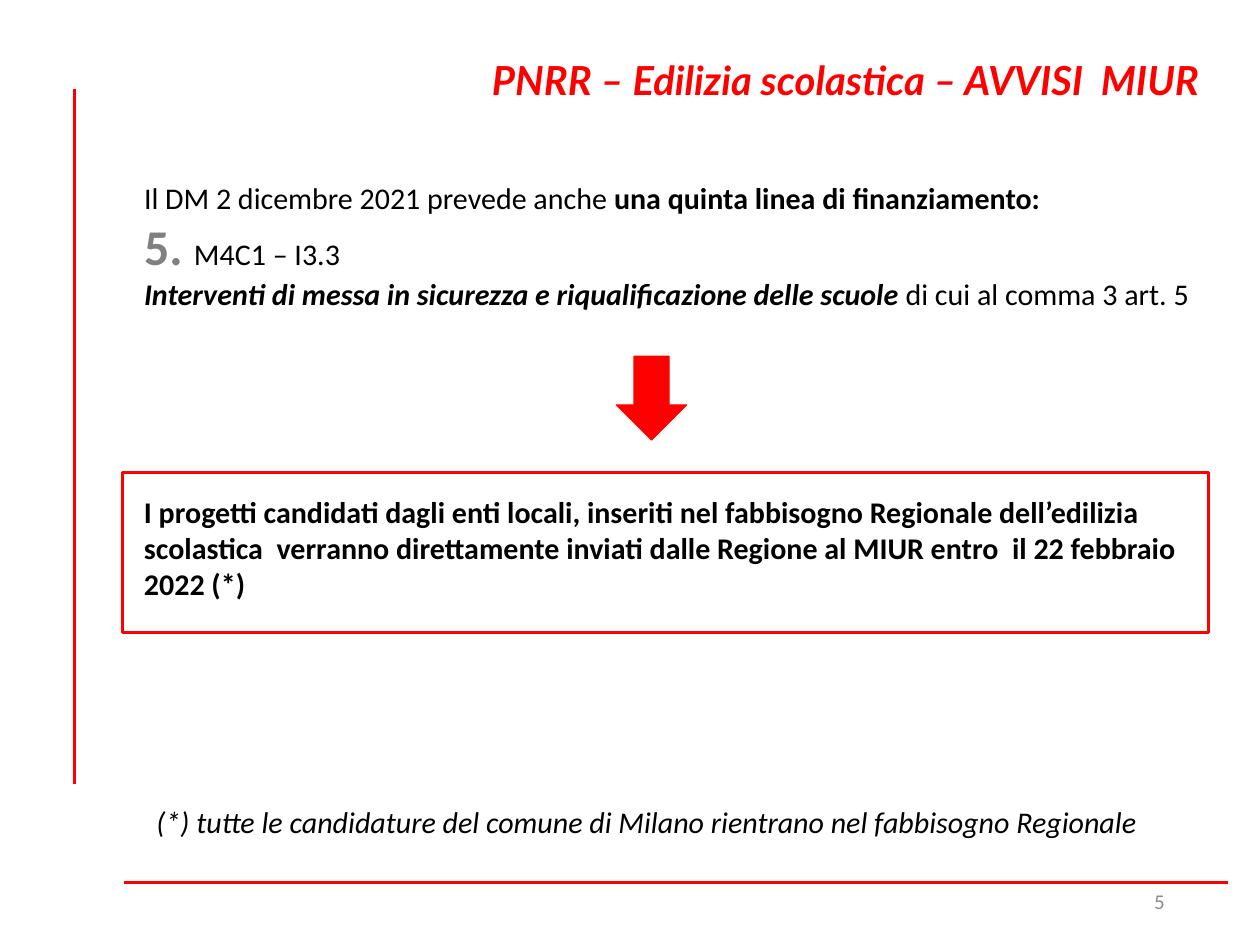
from pptx import Presentation
from pptx.dml.color import RGBColor
from pptx.enum.shapes import MSO_CONNECTOR, MSO_SHAPE
from pptx.enum.text import MSO_ANCHOR, MSO_AUTO_SIZE, PP_ALIGN
from pptx.oxml.ns import qn
from pptx.util import Inches, Pt
from lxml.etree import SubElement

THEME = {
    "red": RGBColor(255, 0, 0),
    "black": RGBColor(0, 0, 0),
    "gray": RGBColor(0x80, 0x80, 0x80),
    "pale": RGBColor(0x8C, 0x8C, 0x8C),
    "title": Pt(32), "text": Pt(24), "step": Pt(40), "page": Pt(16.8),
    "rule": Pt(2.25), "thin": Pt(1),
    "head": "Lato", "body": "Calibri",
}


def place(shape, left, top, width, height):
    spots = dict(left=left, top=top, width=width, height=height)
    for key, val in spots.items():
        setattr(shape, key, Inches(val))


def write(shape, lines, align=PP_ALIGN.LEFT, anchor=MSO_ANCHOR.TOP, wrap=True):
    frame = shape.text_frame
    frame.auto_size = MSO_AUTO_SIZE.NONE
    frame.word_wrap = wrap
    frame.vertical_anchor = anchor
    for i, runs in enumerate(lines):
        para = frame.add_paragraph() if i else frame.paragraphs[0]
        props = para._p.get_or_add_pPr()
        props.set("marL", "0")
        props.set("indent", "0")
        SubElement(props, qn("a:buNone"))
        para.alignment = align
        para.space_before = Pt(0)
        for text, form in runs:
            run = para.add_run()
            run.text = text
            look = {"name": THEME["body"], "size": THEME["text"],
                    "bold": False, "italic": False, **form}
            run.font.color.rgb = look.pop("color", THEME["black"])
            for key, val in look.items():
                setattr(run.font, key, val)


deck = Presentation()
deck.slide_width, deck.slide_height = Inches(14), Inches(10.5)
slide = deck.slides.add_slide(deck.slide_layouts[1])
shapes = slide.shapes
bold = {"bold": True}

# Red rules at the left and the foot
for ends in [(0.83, 8.71, 0.83, 0.99), (1.38, 9.81, 13.64, 9.81)]:
    rule = shapes.add_connector(MSO_CONNECTOR.STRAIGHT, *map(Inches, ends))
    rule.line.color.rgb = THEME["red"]
    rule.line.width = THEME["rule"]
    SubElement(rule._element.spPr, qn("a:effectLst"))

# Title
place(shapes.title, 1.36, 0.57, 12.07, 0.64)
write(shapes.title, [[("PNRR – Edilizia scolastica – AVVISI  MIUR",
                       {"name": THEME["head"], "size": THEME["title"],
                        "color": THEME["red"], "bold": True, "italic": True})]],
      PP_ALIGN.RIGHT)

# Fifth funding line
body = slide.placeholders[1]
place(body, 1.5, 1.94, 11.94, 1.75)
write(body, [
    [("Il DM 2 dicembre 2021 prevede anche ", {}),
     ("una quinta linea di finanziamento:", bold)],
    [("5. ", {"size": THEME["step"], "color": THEME["gray"], "bold": True}),
     ("M4C1 – I3.3", {})],
    [("Interventi di messa in sicurezza e riqualificazione delle scuole",
      {"bold": True, "italic": True}),
     (" di cui al comma 3 art. 5", {})],
])

# Arrow down to the framed result
arrow = shapes.add_shape(MSO_SHAPE.DOWN_ARROW, 0, 0, 0, 0)
place(arrow, 6.85, 3.96, 0.78, 0.93)
arrow.fill.solid()
arrow.fill.fore_color.rgb = THEME["red"]
frame = shapes.add_shape(MSO_SHAPE.RECTANGLE, 0, 0, 0, 0)
place(frame, 1.36, 5.25, 12.07, 1.78)
frame.fill.background()
for shape, width in [(arrow, THEME["thin"]), (frame, THEME["rule"])]:
    shape.shadow.inherit = False
    shape.line.color.rgb = THEME["red"]
    shape.line.width = width
insets = {"margin_left": 0.24, "margin_top": 0.23, "margin_right": 0.1}
for key, val in insets.items():
    setattr(frame.text_frame, key, Inches(val))
write(frame, [[("I progetti candidati dagli enti locali, inseriti nel fabbisogno "
                "Regionale dell’edilizia scolastica  verranno direttamente inviati "
                "dalle Regione al MIUR entro  il 22 febbraio 2022 (*)", bold)]])

# Footnote
note = shapes.add_textbox(0, 0, 0, 0)
place(note, 1.64, 8.88, 11.5, 0.5)
write(note, [[("(*) tutte le candidature del comune di Milano rientrano nel "
               "fabbisogno Regionale", {"italic": True})]], wrap=False)

# Page number
page = shapes.add_textbox(0, 0, 0, 0)
place(page, 9.89, 9.73, 3.15, 0.56)
write(page, [[("5", {"size": THEME["page"], "color": THEME["pale"]})]],
      PP_ALIGN.RIGHT, MSO_ANCHOR.MIDDLE)

deck.save("out.pptx")
